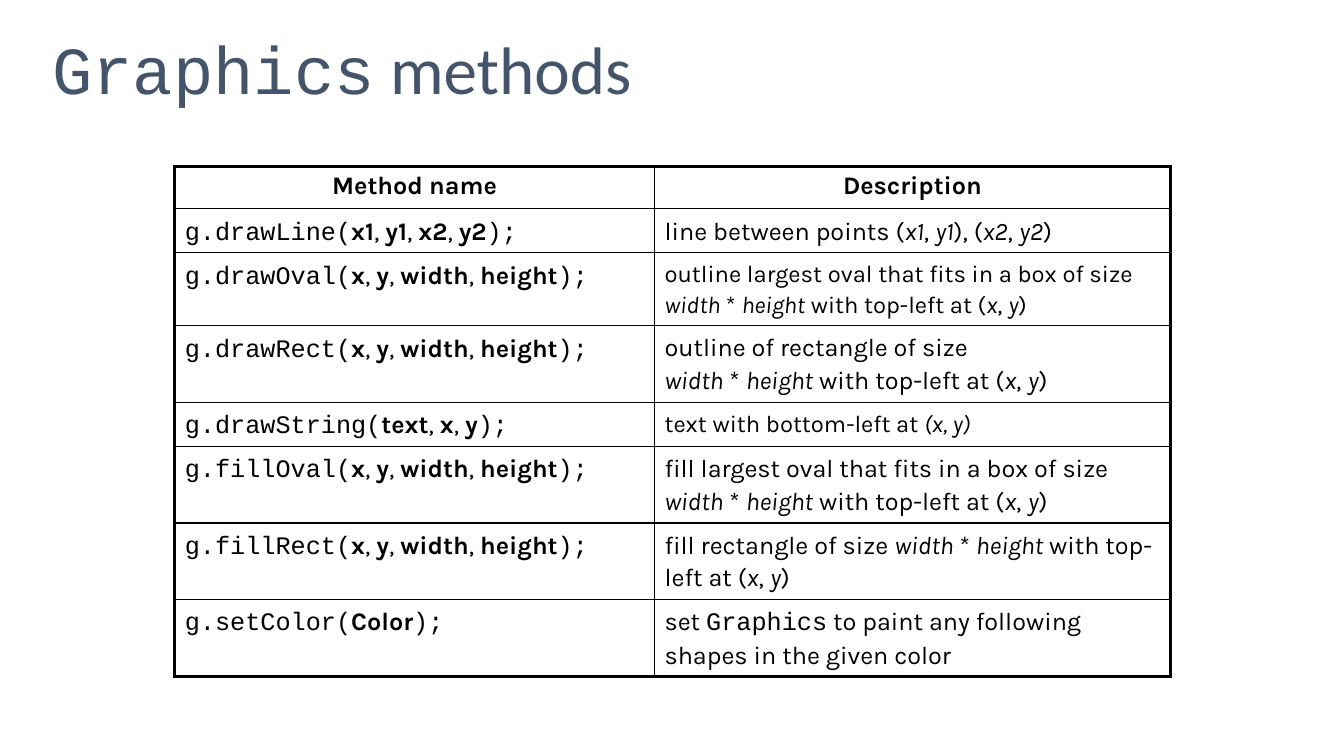
import pptx
import pptx.dml.color
import pptx.enum.text
import pptx.oxml
import pptx.oxml.ns
import pptx.util

Pt = pptx.util.Pt
BLACK = pptx.dml.color.RGBColor(0x00, 0x00, 0x00)
SLATE = pptx.dml.color.RGBColor(0x44, 0x54, 0x6A)
MONO, SANS = "Courier New", "Karla"
ITALIC, CODE = {"italic": True}, {"font": MONO}


def add_text(p, text, font=SANS, size=18, color=BLACK, bold=False, italic=False):
    for i, line in enumerate(text.split("\n")):
        if i:
            p.add_line_break()
        r = p.add_run()
        r.text = line
        r.font.name = font
        r.font.size = Pt(size)
        r.font.color.rgb = color
        r.font.bold = bold
        r.font.italic = italic


def set_borders(cell, **widths):
    tc_pr = cell._tc.get_or_add_tcPr()
    for i, (side, width) in enumerate(widths.items()):
        tc_pr.insert(i, pptx.oxml.parse_xml(
            f'<a:{side} {pptx.oxml.ns.nsdecls("a")} w="{Pt(width)}">'
            f'<a:solidFill><a:srgbClr val="{BLACK}"/></a:solidFill></a:{side}>'))


prs = pptx.Presentation()
prs.slide_width = Pt(960)
prs.slide_height = Pt(540)
s = prs.slides.add_slide(prs.slide_layouts[6])

sp = s.shapes.add_textbox(Pt(30.24), Pt(0), Pt(900), Pt(104.4))
tf = sp.text_frame
tf.word_wrap = True
tf.vertical_anchor = pptx.enum.text.MSO_ANCHOR.MIDDLE
p = tf.paragraphs[0]
p.line_spacing = 0.9
add_text(p, "Graphics", font=MONO, size=48, color=SLATE)
add_text(p, " methods", font="Calibri", size=48, color=SLATE)

BOX = ["x", "y", "width", "height"]
BOX_PLACE = "|width| * |height| with top-left at (|x|, |y|)"
methods = [
    ("drawLine", ["x1", "y1", "x2", "y2"],
     "line between points (|x1|, |y1|), (|x2|, |y2|)", 18, ITALIC, 31.4),
    ("drawOval", BOX,
     "outline largest oval that fits in a box of size " + BOX_PLACE, 17, ITALIC, 51.4),
    ("drawRect", BOX, "outline of rectangle of size\n" + BOX_PLACE, 18, ITALIC, 53.6),
    ("drawString", ["text", "x", "y"], "text with bottom-left at |(x, y)|", 17, ITALIC, 31.4),
    ("fillOval", BOX,
     "fill largest oval that fits in a box of size " + BOX_PLACE, 18, ITALIC, 53.6),
    ("fillRect", BOX, "fill rectangle of size " + BOX_PLACE, 18, ITALIC, 53.6),
    ("setColor", ["Color"],
     "set |Graphics| to paint any following shapes in the given color", 18, CODE, 54.3),
]
heights = [30.24] + [method[-1] for method in methods]

table = s.shapes.add_table(len(heights), 2, Pt(124.8), Pt(119), Pt(711.4), Pt(sum(heights))).table
table.first_row = False
table.horz_banding = False
for column, width in zip(table.columns, [342.7, 368.7]):
    column.width = Pt(width)

last = len(heights) - 1
for row, height in enumerate(heights):
    table.rows[row].height = Pt(height)
    for col in range(2):
        cell = table.cell(row, col)
        cell.fill.background()
        set_borders(cell,
                    lnL=2.25 if col == 0 else 1,
                    lnR=2.25 if col == 1 else 1,
                    lnT=2.25 if row == 0 else 1,
                    lnB=2.25 if row == last else 1)

for col, heading in enumerate(["Method name", "Description"]):
    p = table.cell(0, col).text_frame.paragraphs[0]
    p.alignment = pptx.enum.text.PP_ALIGN.CENTER
    add_text(p, heading, bold=True)

for row, (name, params, description, size, accent, height) in enumerate(methods, 1):
    p = table.cell(row, 0).text_frame.paragraphs[0]
    p.line_spacing = 1.1
    add_text(p, f"g.{name}(", font=MONO)
    for i, param in enumerate(params):
        if i:
            add_text(p, ", ")
        add_text(p, param, bold=True)
    add_text(p, ");", font=MONO)

    p = table.cell(row, 1).text_frame.paragraphs[0]
    p.line_spacing = 1.1
    for i, part in enumerate(description.split("|")):
        if part:
            add_text(p, part, size=size, **(accent if i % 2 else {}))

prs.save("out.pptx")
